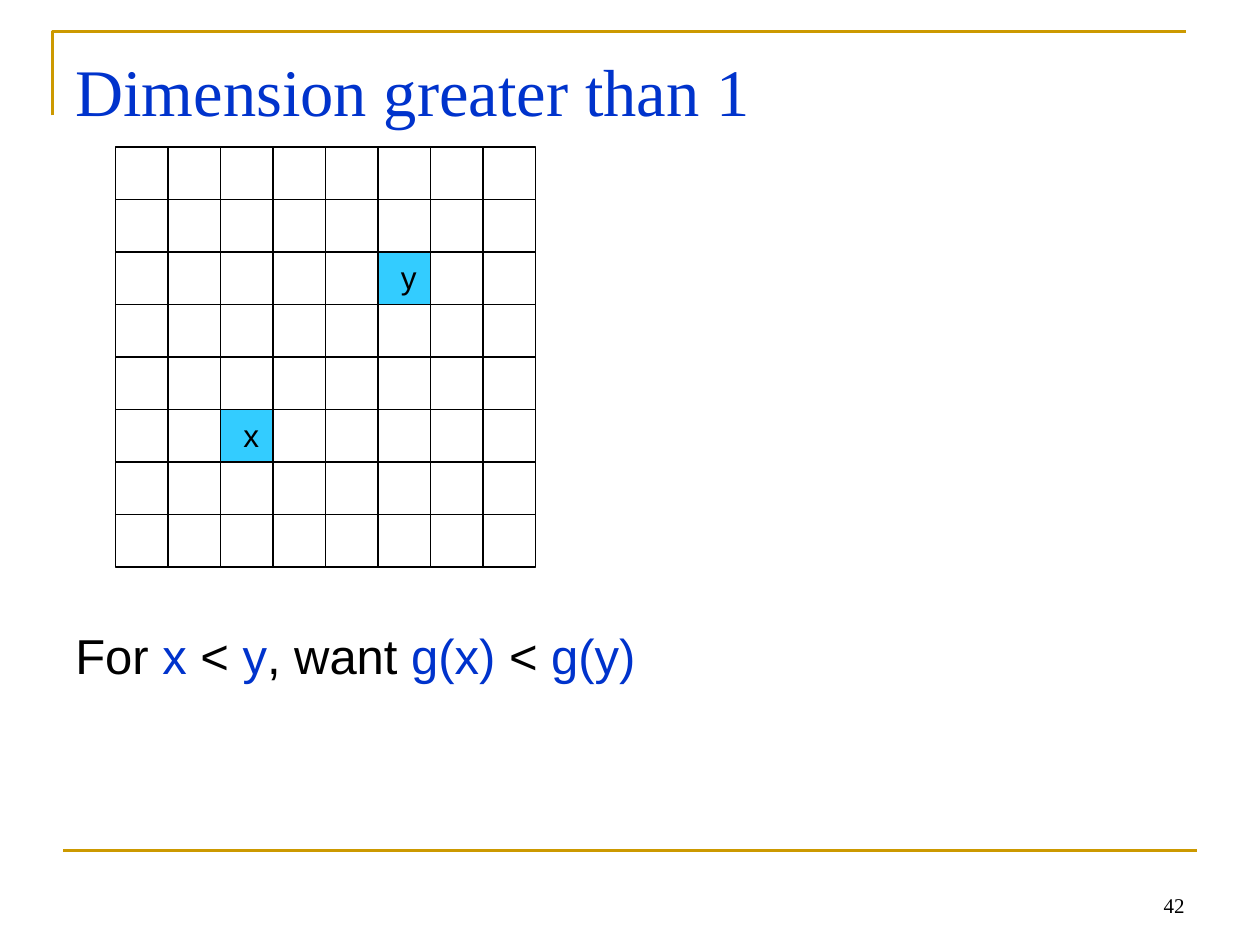
"""Build the slide on monotone maps over a two-dimensional grid."""
import pptx
import pptx.dml.color
import pptx.enum.shapes
import pptx.enum.text
import pptx.oxml.ns
import pptx.util
from lxml import etree

Pt = pptx.util.Pt
ANCHOR = pptx.enum.text.MSO_ANCHOR
ALIGN = pptx.enum.text.PP_ALIGN
GOLD = pptx.dml.color.RGBColor(0xCC, 0x99, 0x00)
BLUE = pptx.dml.color.RGBColor(0x00, 0x33, 0xCC)
CYAN = pptx.dml.color.RGBColor(0x33, 0xCC, 0xFF)
BLACK = pptx.dml.color.RGBColor(0x00, 0x00, 0x00)
WHITE = pptx.dml.color.RGBColor(0xFF, 0xFF, 0xFF)


def add_text(s, box, runs, size, font, anchor=ANCHOR.TOP, wrap=True):
    tf = s.shapes.add_textbox(*map(Pt, box)).text_frame
    tf.word_wrap = wrap
    tf.vertical_anchor = anchor
    p = tf.paragraphs[0]
    for text, color in runs:
        r = p.add_run()
        r.text = text
        r.font.size = Pt(size)
        r.font.name = font
        r.font.color.rgb = color
    return p


prs = pptx.Presentation()
prs.slide_width, prs.slide_height = Pt(720), Pt(540)
s = prs.slides.add_slide(prs.slide_layouts[6])

builder = s.shapes.build_freeform(Pt(30), Pt(66), scale=1.0)
builder.add_line_segments([(Pt(30), Pt(18)), (Pt(678), Pt(18))], close=False)
corner = builder.convert_to_shape()
corner.shadow.inherit = False
corner.fill.background()

rule = s.shapes.add_connector(
    pptx.enum.shapes.MSO_CONNECTOR.STRAIGHT, Pt(36), Pt(486), Pt(684), Pt(486)
)
etree.SubElement(rule.element.spPr, pptx.oxml.ns.qn("a:effectLst"))
for sp in (corner, rule):
    sp.line.color.rgb = GOLD
    sp.line.width = Pt(1.5)

p = add_text(s, (516, 492, 168, 36), [("42", BLACK)], 12, "Times New Roman", ANCHOR.BOTTOM)
p.alignment = ALIGN.RIGHT
add_text(s, (36, 21.6, 648, 56), [("Dimension greater than 1", BLUE)],
         38, "Times New Roman", ANCHOR.BOTTOM)

claim = [("For ", BLACK), ("x", BLUE), (" < ", BLACK), ("y", BLUE),
         (", want ", BLACK), ("g(x)", BLUE), (" < ", BLACK), ("g(y)", BLUE)]
p = add_text(s, (36, 354, 648, 129), claim, 28, "Arial")
p.space_before = Pt(3)

cell, left, top, count = 30, 66, 84, 8
points = {(2, 5): "x", (5, 2): "y"}
for col in range(count):
    for row in range(count):
        sp = s.shapes.add_shape(
            pptx.enum.shapes.MSO_SHAPE.RECTANGLE,
            Pt(left + col * cell), Pt(top + row * cell), Pt(cell), Pt(cell),
        )
        sp.shadow.inherit = False
        sp.fill.solid()
        sp.fill.fore_color.rgb = CYAN if (col, row) in points else WHITE
        sp.line.color.rgb = BLACK
        sp.line.width = Pt(0.75)

for (col, row), name in points.items():
    add_text(s, (left + col * cell + 6, top + row * cell, 23.5, 29),
             [(name, BLACK)], 18, "Arial", wrap=False)

prs.save("out.pptx")
